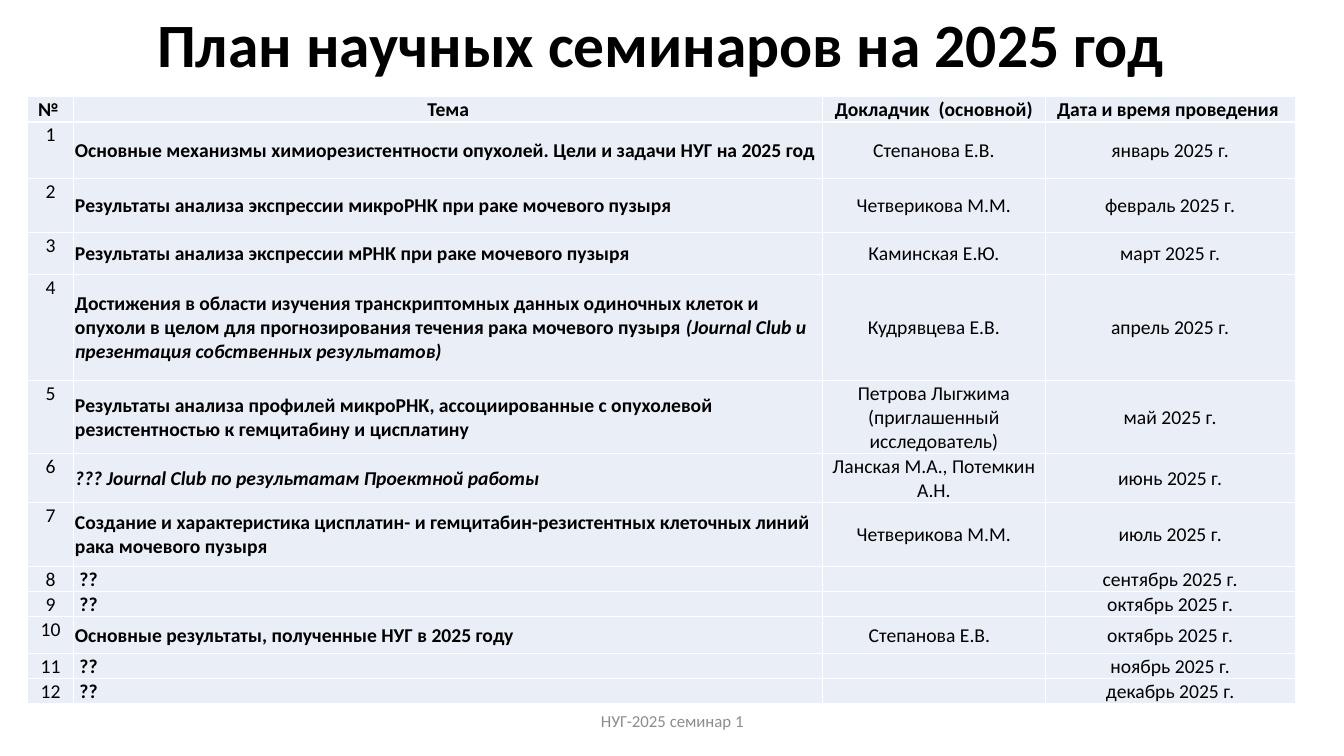
import lxml.etree
import pptx
import pptx.dml.color
import pptx.enum.text
import pptx.oxml.ns
import pptx.util

Cm, Pt = pptx.util.Cm, pptx.util.Pt
ALIGN, ANCHOR = pptx.enum.text.PP_ALIGN, pptx.enum.text.MSO_ANCHOR
qn = pptx.oxml.ns.qn

COLUMN_WIDTHS = [1.17, 18.87, 5.61, 6.3]
HEADERS = ["№ ", "Тема", "Докладчик  (основной)", "Дата и время проведения "]
HEADER_HEIGHT = 0.61
UNKNOWN = [(" ??", False)]

# Row height, topic as (text, italic) runs, speaker, month
SEMINARS = [
    (1.43, [("Основные механизмы химиорезистентности опухолей. Цели и задачи НУГ на 2025 год", False)],
     "Степанова Е.В.", "январь"),
    (1.36, [("Результаты анализа экспрессии микроРНК при раке мочевого пузыря", False)],
     "Четверикова М.М.", "февраль"),
    (1.05, [("Результаты анализа экспрессии мРНК при раке мочевого пузыря", False)],
     "Каминская Е.Ю.", "март"),
    (2.68, [("Достижения в области изучения транскриптомных данных одиночных клеток и опухоли "
             "в целом для прогнозирования течения рака мочевого пузыря ", False),
            ("(Journal Club и презентация собственных результатов)", True)],
     "Кудрявцева Е.В.", "апрель"),
    (1.82, [("Результаты анализа профилей микроРНК, ассоциированные с опухолевой "
             "резистентностью к гемцитабину и цисплатину", False)],
     "Петрова Лыгжима (приглашенный исследователь)", "май"),
    (1.23, [("??? Journal Club по результатам Проектной работы", True)],
     "Ланская М.А., Потемкин А.Н.", "июнь"),
    (1.61, [("Создание и характеристика цисплатин- и гемцитабин-резистентных клеточных линий "
             "рака мочевого пузыря", False)],
     "Четверикова М.М.", "июль"),
    (0.62, UNKNOWN, "", "сентябрь"),
    (0.62, UNKNOWN, "", "октябрь"),
    (0.93, [("Основные результаты, полученные НУГ в 2025 году", False)],
     "Степанова Е.В.  ", "октябрь"),
    (0.62, UNKNOWN, "", "ноябрь"),
    (0.62, UNKNOWN, "", "декабрь"),
]


def rgb(value):
    return pptx.dml.color.RGBColor.from_string(value)


def set_all(obj, values):
    for name, value in values.items():
        setattr(obj, name, value)


def add_run(p, text, size, color="000000", bold=False, italic=False):
    r = p.add_run()
    r.text = text
    set_all(r.font, {"name": "Calibri", "size": Pt(size), "bold": bold, "italic": italic})
    r.font.color.rgb = rgb(color)


def add_borders(cell):
    tc_pr = cell._tc.get_or_add_tcPr()
    for side in ("lnL", "lnR", "lnT", "lnB"):
        ln = lxml.etree.SubElement(tc_pr, qn(f"a:{side}"), w=str(Pt(1)))
        fill = lxml.etree.SubElement(ln, qn("a:solidFill"))
        lxml.etree.SubElement(fill, qn("a:srgbClr"), val="FFFFFF")


def fill_cell(cell, runs, bold=False, align=ALIGN.CENTER, anchor=ANCHOR.MIDDLE):
    set_all(cell, {"margin_left": Cm(0.03), "margin_right": Cm(0.03), "margin_top": Cm(0.03),
                   "margin_bottom": 0, "vertical_anchor": anchor})
    add_borders(cell)
    cell.fill.solid()
    cell.fill.fore_color.rgb = rgb("EAEFF7")
    p = cell.text_frame.paragraphs[0]
    p.alignment = align
    for text, italic in runs:
        if text:
            add_run(p, text, 14, bold=bold, italic=italic)
        else:
            # An empty cell keeps the text size, so its row stays low
            lxml.etree.SubElement(p._p, qn("a:endParaRPr"), sz="1400")


def add_title(s, x, y, w, h):
    sp = s.shapes.title
    set_all(sp, {"left": Cm(x), "top": Cm(y), "width": Cm(w), "height": Cm(h)})
    set_all(sp.text_frame, {"word_wrap": True, "vertical_anchor": ANCHOR.MIDDLE,
                            "auto_size": pptx.enum.text.MSO_AUTO_SIZE.NONE})
    p = sp.text_frame.paragraphs[0]
    set_all(p, {"alignment": ALIGN.CENTER, "line_spacing": 0.9})
    add_run(p, "План научных семинаров на 2025 год", 44, bold=True)


def add_schedule(s, x, y):
    heights = [HEADER_HEIGHT] + [seminar[0] for seminar in SEMINARS]
    table = s.shapes.add_table(len(heights), len(COLUMN_WIDTHS), Cm(x), Cm(y),
                               Cm(sum(COLUMN_WIDTHS)), Cm(sum(heights))).table
    set_all(table, {"first_row": False, "horz_banding": False})
    for column, width in zip(table.columns, COLUMN_WIDTHS):
        column.width = Cm(width)
    for row, height in zip(table.rows, heights):
        row.height = Cm(height)

    # Header row
    for cell, text in zip(table.rows[0].cells, HEADERS):
        fill_cell(cell, [(text, False)], bold=True, anchor=ANCHOR.BOTTOM)

    # Seminar rows
    for i, (_, topic, speaker, month) in enumerate(SEMINARS, 1):
        number_cell, topic_cell, speaker_cell, date_cell = table.rows[i].cells
        fill_cell(number_cell, [(str(i), False)], anchor=ANCHOR.TOP)
        fill_cell(topic_cell, topic, bold=True, align=ALIGN.LEFT)
        fill_cell(speaker_cell, [(speaker, False)])
        fill_cell(date_cell, [(f"{month} 2025 г.", False)])


def add_footer(s, x, y, w, h):
    tf = s.shapes.add_textbox(Cm(x), Cm(y), Cm(w), Cm(h)).text_frame
    set_all(tf, {"word_wrap": True, "vertical_anchor": ANCHOR.MIDDLE})
    p = tf.paragraphs[0]
    p.alignment = ALIGN.CENTER
    add_run(p, "НУГ-2025 семинар 1", 12, "8C8C8C")


def main():
    prs = pptx.Presentation()
    set_all(prs, {"slide_width": Cm(33.87), "slide_height": Cm(19.05)})
    s = prs.slides.add_slide(prs.slide_layouts[5])
    add_title(s, 2.06, -0.03, 29.21, 2.44)
    add_schedule(s, 0.69, 2.44)
    add_footer(s, 11.23, 17.65, 11.43, 1.02)
    prs.save("out.pptx")


if __name__ == "__main__":
    main()
